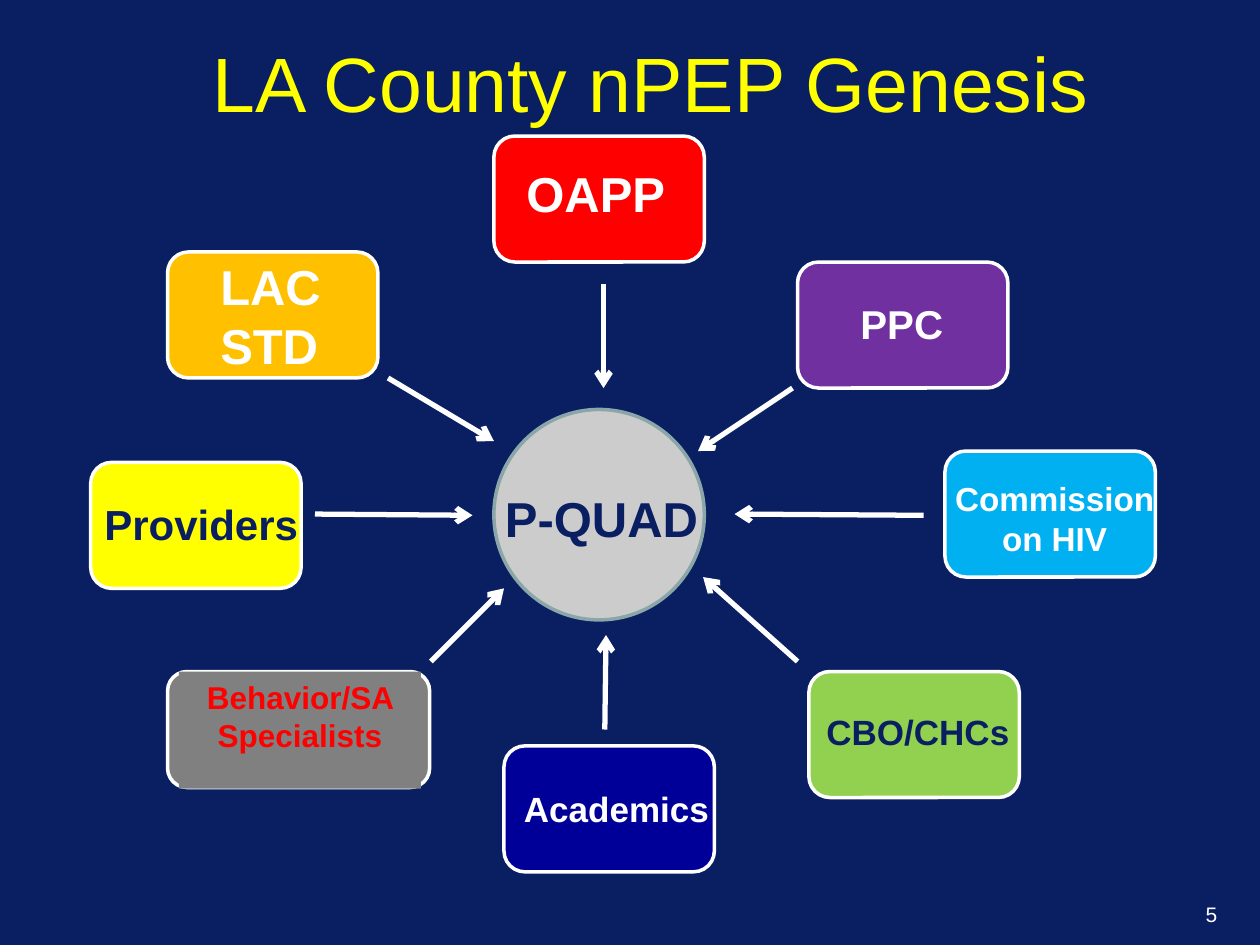
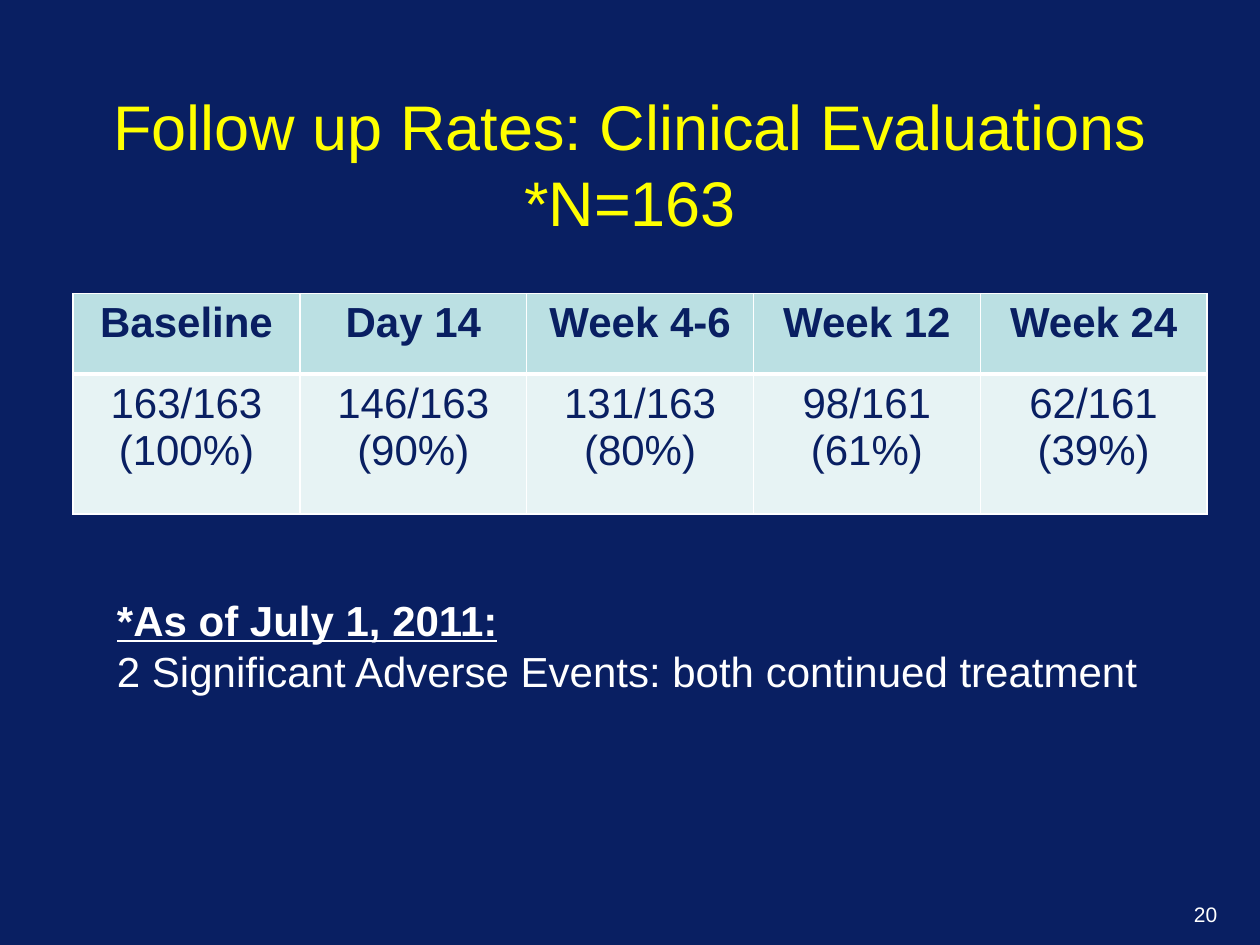
from lxml import etree
from pptx import Presentation
from pptx.dml.color import RGBColor
from pptx.enum.shapes import MSO_CONNECTOR, MSO_SHAPE
from pptx.enum.text import MSO_ANCHOR, PP_ALIGN
from pptx.oxml.ns import qn
from pptx.util import Inches, Pt

LEFT, CENTER, RIGHT = PP_ALIGN.LEFT, PP_ALIGN.CENTER, PP_ALIGN.RIGHT
MIDDLE, TOP = MSO_ANCHOR.MIDDLE, MSO_ANCHOR.TOP
STRAIGHT = MSO_CONNECTOR.STRAIGHT
ELLIPSE, ROUNDED, RECTANGLE = MSO_SHAPE.OVAL, MSO_SHAPE.ROUNDED_RECTANGLE, MSO_SHAPE.RECTANGLE

FONT = "Arial"
NAVY, WHITE, YELLOW = "091F62", "FFFFFF", "FFFF00"
GRAY, HEADER_FILL, BODY_FILL = "808080", "BBE0E3", "E7F3F4"
TITLE_ONLY = 5
STAKEHOLDER_SIZE = (1.67, 1)

# place of the box, fill, label, place and width of the label, size, colour, alignment
STAKEHOLDERS = [
    ((3.92, 1.08), "FF0000", "OAPP", (4.08, 1.25, 1.76), 28, WHITE, LEFT),
    ((1.33, 2), "FFC000", "LAC STD", (1.65, 1.99, 1.4), 28, WHITE, LEFT),
    ((0.72, 3.67), YELLOW, "Providers", (0.73, 3.91, 2), 24, NAVY, LEFT),
    ((6.42, 5.33), "92D050", "CBO/CHCs", (6.46, 5.59, 2), 20, NAVY, LEFT),
    ((7.5, 3.58), "00B0F0", "Commission on HIV", (7.32, 3.75, 2.1), 19, WHITE, CENTER),
    ((6.33, 2.08), "7030A0", "PPC", (6.73, 2.33, 1.08), 23, WHITE, LEFT),
    ((4, 5.92), "000099", "Academics", (4.06, 6.2, 2.12), 20, WHITE, LEFT),
]
ARROWS = [
    ((4.79, 2.25), (4.79, 3.08)),
    ((6.29, 3.08), (5.54, 3.58)),
    ((7.33, 4.09), (5.83, 4.08)),
    ((6.33, 5.25), (5.58, 4.58)),
    ((4.8, 5.79), (4.81, 5.04)),
    ((3.42, 5.25), (4, 4.67)),
    ((2.5, 4.08), (3.75, 4.09)),
    ((3.08, 3), (3.92, 3.5)),
]
FOLLOW_UP = [
    ["Baseline", "Day 14", "Week 4-6", "Week 12", "Week 24"],
    ["163/163\n(100%)", "146/163\n(90%)", "131/163\n(80%)", "98/161\n(61%)", "62/161\n(39%)"],
]


def color(hex_string):
    return RGBColor.from_string(hex_string)


def inches(values):
    return [Inches(value) for value in values]


def format_text(frame, size, hex_string, align=LEFT, bold=False):
    for para in frame.paragraphs:
        para.alignment = align
        para.font.name = FONT
        para.font.size = Pt(size)
        para.font.bold = bold
        para.font.color.rgb = color(hex_string)


def add_slide(deck, title, title_place, title_size, number):
    page = deck.slides.add_slide(deck.slide_layouts[TITLE_ONLY])
    heading = page.shapes.title
    heading.left, heading.top, heading.width, heading.height = inches(title_place)
    heading.text_frame.text = title
    heading.text_frame.vertical_anchor = MIDDLE
    format_text(heading.text_frame, title_size, YELLOW, CENTER)
    add_text(page, number, (7.43, 7.11, 2.33, 0.34), 12, WHITE, RIGHT)
    return page


def add_text(page, text, place, size, hex_string, align=LEFT, bold=False):
    box = page.shapes.add_textbox(*inches(place))
    box.text_frame.word_wrap = True
    box.text_frame.text = text
    format_text(box.text_frame, size, hex_string, align, bold)
    return box


def add_block(page, kind, place, fill, line=None, line_width=2):
    block = page.shapes.add_shape(kind, *inches(place))
    block.shadow.inherit = False
    block.fill.solid()
    block.fill.fore_color.rgb = color(fill)
    if line:
        block.line.color.rgb = color(line)
        block.line.width = Pt(line_width)
    else:
        block.line.fill.background()
    return block


def add_arrow(page, start, end):
    arrow = page.shapes.add_connector(STRAIGHT, *inches(start + end))
    arrow.line.color.rgb = color(WHITE)
    arrow.line.width = Pt(3)
    etree.SubElement(arrow.line._get_or_add_ln(), qn("a:tailEnd"), type="arrow")
    etree.SubElement(arrow._element.spPr, qn("a:effectLst"))


def set_borders(cell, top, bottom):
    """Draw white cell borders; the widths of top and bottom are in points."""
    properties = cell._tc.get_or_add_tcPr()
    widths = {"lnL": 1, "lnR": 1, "lnT": top, "lnB": bottom}
    for position, (side, width) in enumerate(widths.items()):
        border = etree.Element(qn(f"a:{side}"), w=str(Pt(width)))
        fill = etree.SubElement(border, qn("a:solidFill"))
        etree.SubElement(fill, qn("a:srgbClr"), val=WHITE)
        properties.insert(position, border)


def add_follow_up_table(page):
    rows, columns = len(FOLLOW_UP), len(FOLLOW_UP[0])
    table = page.shapes.add_table(rows, columns, *inches((0.58, 2.33, 9, 1.75))).table
    for row, height in zip(table.rows, (0.64, 1.11)):
        row.height = Inches(height)
    for row_index, texts in enumerate(FOLLOW_UP):
        is_header = row_index == 0
        for column_index, text in enumerate(texts):
            cell = table.cell(row_index, column_index)
            cell.text_frame.text = text
            format_text(cell.text_frame, 24, NAVY, CENTER, is_header)
            cell.fill.solid()
            cell.fill.fore_color.rgb = color(HEADER_FILL if is_header else BODY_FILL)
            set_borders(cell, *((1, 3) if is_header else (3, 1)))


def build_genesis(deck):
    page = add_slide(deck, "LA County nPEP Genesis", (0.83, 0.3, 8.67, 0.7), 44, "5")
    add_block(page, ELLIPSE, (3.92, 3.25, 1.67, 1.67), "CCCCCC", "8AA6A8")
    add_text(page, "P-QUAD", (3.91, 3.83, 1.76, 0.57), 28, NAVY, bold=True)
    for corner, fill, label, label_place, size, ink, align in STAKEHOLDERS:
        add_block(page, ROUNDED, corner + STAKEHOLDER_SIZE, fill, WHITE)
        add_text(page, label, label_place + (0.5,), size, ink, align, True)

    add_block(page, ROUNDED, (1.33, 5.33, 2.08, 0.92), GRAY, WHITE)
    specialists = add_block(page, RECTANGLE, (1.42, 5.33, 1.92, 0.93), GRAY)
    specialists.text_frame.text = "Behavior/SA Specialists"
    specialists.text_frame.vertical_anchor = TOP
    format_text(specialists.text_frame, 18, "FF0000", CENTER, True)

    for start, end in ARROWS:
        add_arrow(page, start, end)


def build_follow_up(deck):
    title = "Follow up Rates: Clinical Evaluations\v*N=163"
    page = add_slide(deck, title, (0.5, 0.67, 9, 1.25), 36, "20")
    add_follow_up_table(page)
    note = "*As of July 1, 2011:\n2 Significant Adverse Events: both continued treatment"
    box = add_text(page, note, (0.83, 4.67, 8.38, 1.21), 24, WHITE)
    box.text_frame.word_wrap = False
    date_font = box.text_frame.paragraphs[0].runs[0].font
    date_font.bold = True
    date_font.underline = True


def main():
    deck = Presentation()
    deck.slide_width, deck.slide_height = Inches(10), Inches(7.5)
    background = deck.slide_master.background.fill
    background.solid()
    background.fore_color.rgb = color(NAVY)
    build_genesis(deck)
    build_follow_up(deck)
    deck.save("out.pptx")


if __name__ == "__main__":
    main()
